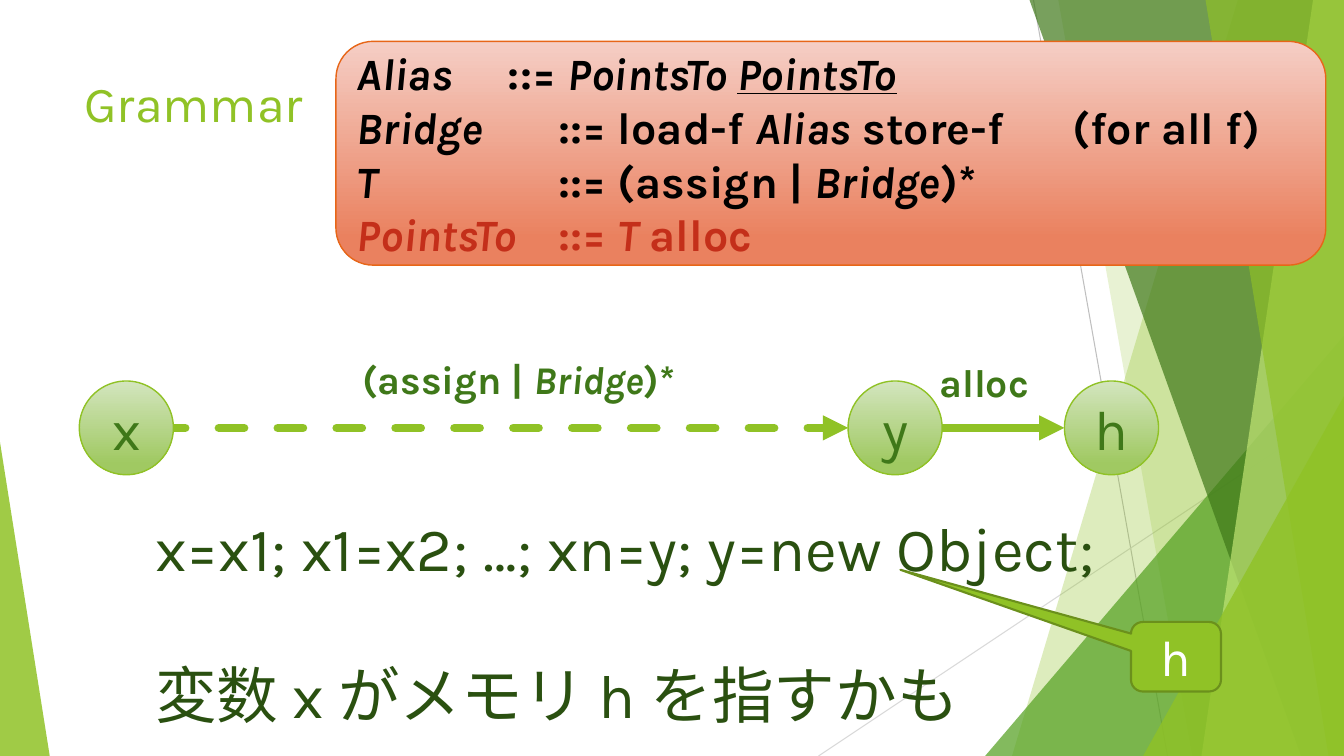
from lxml.etree import SubElement
from pptx import Presentation
from pptx.dml.color import RGBColor
from pptx.enum.dml import MSO_LINE
from pptx.enum.shapes import MSO_CONNECTOR, MSO_SHAPE
from pptx.enum.text import MSO_ANCHOR, MSO_AUTO_SIZE, PP_ALIGN
from pptx.oxml.ns import qn
from pptx.util import Inches, Pt

LIME, GREEN, DARK, RED = "90C226", "3F7819", "2A5010", "C42F1A"


def rgb(code):
    return RGBColor.from_string(code)


class Deck:
    """Draw styled elements on a slide, with lengths in percent of its size."""

    font_name = "Karla"

    def __init__(self):
        self.show = Presentation()
        self.show.slide_width, self.show.slide_height = Inches(13.333), Inches(7.5)
        self.slide = self.show.slides.add_slide(self.show.slide_layouts[6])
        self.shapes = self.slide.shapes

    def place(self, *shares):
        sides = self.show.slide_width, self.show.slide_height
        return [round(sides[i % 2] * share / 100) for i, share in enumerate(shares)]

    def paint(self, shape, fill, line=None, width=1, alpha=100):
        shape.shadow.inherit = False
        if isinstance(fill, tuple):
            shape.fill.gradient()
            shape.fill.gradient_angle = 270
            for stop, position, color in zip(shape.fill.gradient_stops, (0, 0.88), fill):
                stop.position = position
                stop.color.rgb = rgb(color)
        else:
            shape.fill.solid()
            shape.fill.fore_color.rgb = rgb(fill)
        if alpha < 100:
            color = shape.element.spPr.find(".//" + qn("a:srgbClr"))
            SubElement(color, qn("a:alpha"), val=str(alpha * 1000))
        if line:
            shape.line.color.rgb = rgb(line)
            shape.line.width = Pt(width)
        else:
            shape.line.fill.background()

    def block(self, preset, box, fill, line=None, width=1, alpha=100, adjust=()):
        shape = self.shapes.add_shape(preset, *self.place(*box))
        for i, value in enumerate(adjust):
            shape.adjustments[i] = value
        self.paint(shape, fill, line, width, alpha)
        return shape

    def band(self, top, bottom, fill, alpha):
        start, *corners = [
            self.place(*point)
            for point in ((top, 0), (100, 0), (100, 100), (bottom, 100))
        ]
        builder = self.shapes.build_freeform(*start)
        builder.add_line_segments(corners, close=True)
        self.paint(builder.convert_to_shape(), fill, alpha=alpha)

    def connect(self, ends, color, width, arrow=False, dashed=False):
        link = self.shapes.add_connector(MSO_CONNECTOR.STRAIGHT, *self.place(*ends))
        link.line.color.rgb = rgb(color)
        link.line.width = Pt(width)
        properties = link.element.spPr
        stroke = properties.find(qn("a:ln"))
        if dashed:
            link.line.dash_style = MSO_LINE.DASH
        if arrow:
            stroke.set("cap", "rnd")
            SubElement(stroke, qn("a:tailEnd"), type="triangle")
        SubElement(properties, qn("a:effectLst"))

    def paragraph(self, frame, runs, size, color, bold=False, align=PP_ALIGN.LEFT,
                  tabs=(), gap=0):
        line = frame.paragraphs[0]
        if line.runs:
            line = frame.add_paragraph()
        line.alignment = align
        line.space_before = Pt(gap)
        if tabs:
            stops = SubElement(line._p.get_or_add_pPr(), qn("a:tabLst"))
            for stop in tabs:
                SubElement(stops, qn("a:tab"), pos=str(Inches(stop)), algn="l")
        line.font.name, line.font.size = self.font_name, Pt(size)
        line.font.bold, line.font.color.rgb = bold, rgb(color)
        for text, style in runs:
            run = line.add_run()
            run.text = text
            if "i" in style:
                run.font.italic = True
            if "u" in style:
                run.font.underline = True

    def text(self, box, lines, size, color, bold=False, gap=0, grow=True):
        frame = self.shapes.add_textbox(*self.place(*box)).text_frame
        frame.word_wrap = True
        frame.auto_size = MSO_AUTO_SIZE.SHAPE_TO_FIT_TEXT if grow else MSO_AUTO_SIZE.NONE
        for i, runs in enumerate(lines):
            self.paragraph(frame, runs, size, color, bold, gap=gap if i else 0)

    def label(self, shape, name, size, color):
        shape.text_frame.vertical_anchor = MSO_ANCHOR.MIDDLE
        self.paragraph(shape.text_frame, [(name, "")], size, color, align=PP_ALIGN.CENTER)

    def backdrop(self):
        self.connect((76.9, 0, 86.87, 100), "BFBFBF", 0.75)
        self.connect((100, 53.7, 60.9, 100), "D9D9D9", 0.75)
        triangle = MSO_SHAPE.ISOSCELES_TRIANGLE
        self.band(92.1, 75.3, LIME, 30)
        self.band(78.75, 88.7, LIME, 20)
        self.block(triangle, (73.3, 44.4, 26.7, 55.6), "54A021", alpha=72, adjust=[1])
        self.band(76.6, 96.8, GREEN, 70)
        self.band(97.7, 89.4, "C0E474", 70)
        self.band(89.7, 98.85, LIME, 65)
        self.block(triangle, (85.05, 52.4, 14.95, 47.6), LIME, alpha=80, adjust=[1])
        self.block(triangle, (0, 58.5, 3.7, 41.5), LIME, alpha=85, adjust=[0])

    def graph(self):
        diameter, top, middle = (7, 12.4), 50.4, 56.6
        nodes = {"x": 5.9, "y": 63.1, "h": 79.2}
        self.connect((11.9, middle, nodes["y"], middle), LIME, 6, arrow=True, dashed=True)
        self.connect((nodes["y"] + diameter[0], middle, nodes["h"], middle), LIME, 6, arrow=True)
        for name, left in nodes.items():
            node = self.block(MSO_SHAPE.OVAL, (left, top, *diameter), ("D3E5BE", "A0C962"), LIME)
            self.label(node, name, 40, GREEN)
        self.text((69.15, 46.8, 12.2, 7.6), [[("alloc", "")]], 28, GREEN, bold=True)
        path_label = [("(assign | ", ""), ("Bridge", "i"), (")*", "")]
        self.text((26.2, 46.4, 27.8, 7.6), [path_label], 28, GREEN, bold=True)

    def grammar(self):
        rules = [
            ([("Alias", "i"), ("\t::= ", ""), ("PointsTo ", "i"), ("PointsTo", "iu")],
             "000000", (1.5,)),
            ([("Bridge", "i"), ("\t::= load-f ", ""), ("Alias", "i"),
              (" store-f\t(for all f)", "")], "000000", (2, 7.1)),
            ([("T", "i"), ("\t::= (assign | ", ""), ("Bridge", "i"), (")*", "")],
             "000000", (2,)),
            ([("PointsTo", "i"), ("\t::= ", ""), ("T ", "i"), ("alloc", "")], RED, (2,)),
        ]
        panel = self.block(MSO_SHAPE.ROUNDED_RECTANGLE, (25, 5.47, 73.65, 29.6),
                           ("F5CEC5", "EA815F"), "E76618")
        panel.text_frame.vertical_anchor = MSO_ANCHOR.MIDDLE
        for runs, color, tabs in rules:
            self.paragraph(panel.text_frame, runs, 32, color, bold=True, tabs=tabs)


def main():
    deck = Deck()
    deck.backdrop()
    deck.text((5.55, 8.93, 70.5, 19.2), [[("Grammar", "")]], 36, LIME, grow=False)
    deck.graph()
    example = [[("x=x1; x1=x2; …; xn=y; y=new Object;", "")],
               [("変数 x がメモリ h を指すかも", "")]]
    deck.text((10.8, 66.8, 85.05, 30.9), example, 44, DARK, gap=52)
    memory = deck.block(MSO_SHAPE.ROUNDED_RECTANGULAR_CALLOUT, (84.15, 82.27, 6.7, 9.2),
                        LIME, "6B901C", 1.5, adjust=[-3.06, -1.25, 0.17])
    deck.label(memory, "h", 36, "FFFFFF")
    deck.grammar()
    deck.show.save("out.pptx")


if __name__ == "__main__":
    main()
